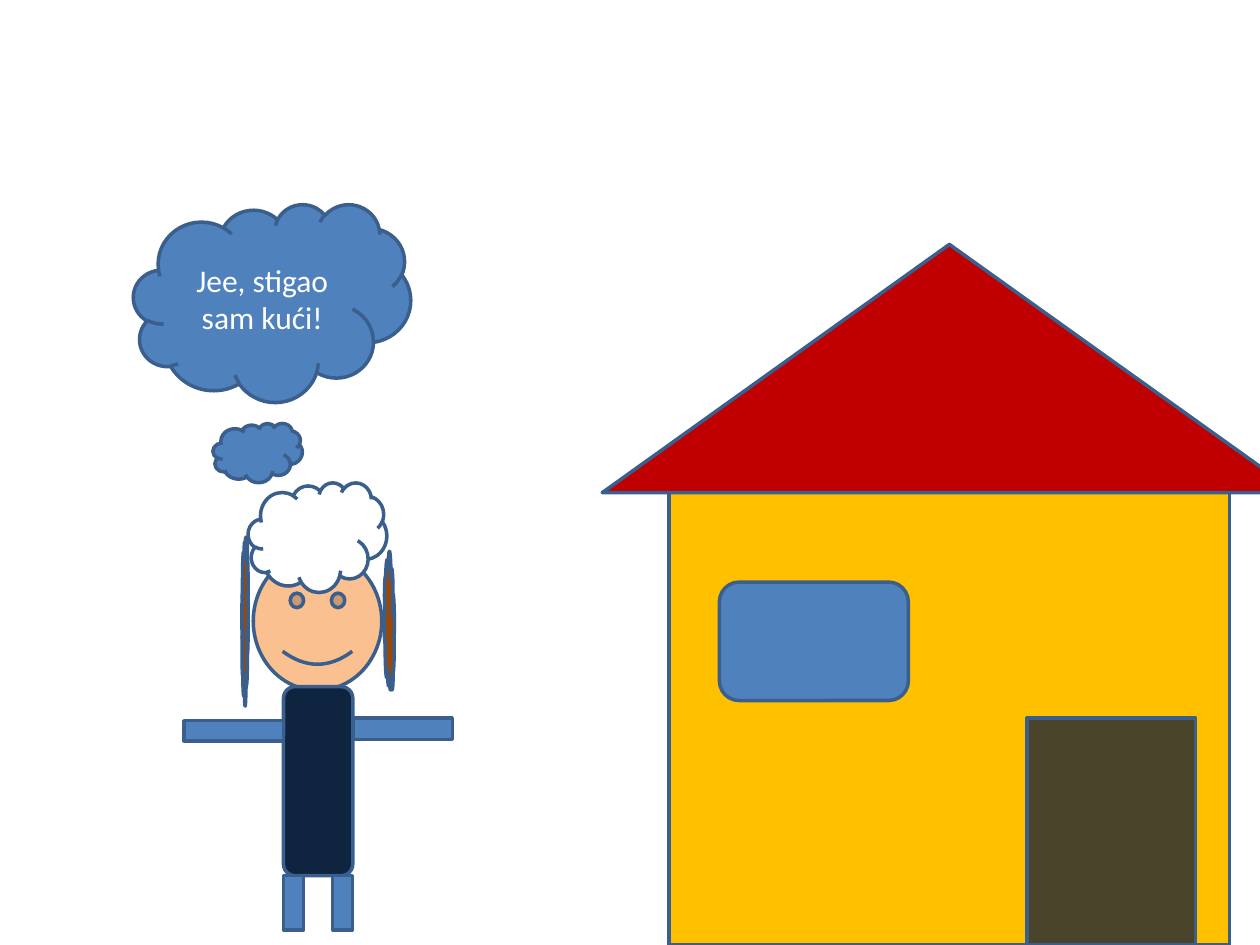
from dataclasses import dataclass

from pptx import Presentation, util as u
from pptx.dml import color
from pptx.enum import shapes, text

KIND = shapes.MSO_SHAPE


@dataclass(frozen=True)
class Theme:
    """Colours, type and line widths of the drawing."""
    outline: str = "3A5F8C"
    blue: str = "4F81BD"
    wall: str = "FFC000"
    roof: str = "C00000"
    door: str = "4A452A"
    skin: str = "FAC090"
    white: str = "FFFFFF"
    hair: str = "984807"
    body: str = "0F243E"
    font: str = "Calibri"
    size: int = 18
    line: int = 2


THEME = Theme()


@dataclass(frozen=True)
class Box:
    """A rectangle in inches."""
    left: float
    top: float
    width: float
    height: float

    def inner(self, left, top, width, height):
        """Return a box placed relative to this one."""
        return Box(self.left + left, self.top + top, width, height)


def add_figure(page, kind, box, fill, flip=False):
    """Draw one outlined preset shape."""
    lengths = (box.left, box.top, box.width, box.height)
    shape = page.shapes.add_shape(kind, *map(u.Inches, lengths))
    shape.shadow.inherit = False
    shape.fill.solid()
    shape.fill.fore_color.rgb = color.RGBColor.from_string(fill)
    shape.line.color.rgb = color.RGBColor.from_string(THEME.outline)
    shape.line.width = u.Pt(THEME.line)
    if flip:
        shape.element.spPr.xfrm.set("flipV", "1")
    return shape


def write(shape, words, size=THEME.size, ink=THEME.white, align=text.PP_ALIGN.CENTER):
    """Write formatted text in the middle of a shape."""
    frame = shape.text_frame
    frame.word_wrap = True
    frame.vertical_anchor = text.MSO_ANCHOR.MIDDLE
    para = frame.paragraphs[0]
    para.alignment = align
    span = para.add_run()
    span.text = words
    span.font.name = THEME.font
    span.font.size = u.Pt(size)
    span.font.color.rgb = color.RGBColor.from_string(ink)


def draw_house(page, box):
    """Draw the wall, roof, window and door."""
    roof_height, eave = 1.97, 0.53
    wall = box.inner(eave, roof_height, box.width - 2 * eave, box.height - roof_height)
    add_figure(page, KIND.RECTANGLE, wall, THEME.wall)
    add_figure(page, KIND.ISOSCELES_TRIANGLE, box.inner(0, 0, box.width, roof_height), THEME.roof)
    add_figure(page, KIND.ROUNDED_RECTANGLE, wall.inner(0.4, 0.71, 1.5, 0.94), THEME.blue)
    add_figure(page, KIND.RECTANGLE, wall.inner(2.84, wall.height - 1.8, 1.34, 1.8), THEME.door)


def draw_head(page, box):
    """Draw the face, the curls and a lock of hair on each side."""
    add_figure(page, KIND.SMILEY_FACE, box.inner(0.09, 0.55, 1.02, 1.1), THEME.skin)
    add_figure(page, KIND.CLOUD, box.inner(0.05, 0, 1.1, 0.87), THEME.white)
    add_figure(page, KIND.CLOUD, box.inner(1.13, 0.55, 0.08, 1.1), THEME.hair, flip=True)
    add_figure(page, KIND.CLOUD, box.inner(0, 0.43, 0.05, 1.34), THEME.hair)


def draw_body(page, box):
    """Draw the trunk with its legs and arms."""
    arm, leg, trunk_height = 0.79, 0.16, 1.5
    trunk = box.inner(arm, 0, box.width - 2 * arm, trunk_height)
    add_figure(page, KIND.ROUNDED_RECTANGLE, trunk, THEME.body)
    for left in (0, trunk.width - leg):
        limb = trunk.inner(left, trunk_height, leg, box.height - trunk_height)
        add_figure(page, KIND.RECTANGLE, limb, THEME.blue)
    for left, top, thickness in ((0, 0.27, 0.16), (box.width - arm, 0.25, 0.17)):
        add_figure(page, KIND.RECTANGLE, box.inner(left, top, arm, thickness), THEME.blue)


def draw_thought(page, box, words):
    """Draw the small puff and the cloud that holds the thought."""
    add_figure(page, KIND.CLOUD, box.inner(0.63, 1.74, 0.71, 0.47), THEME.blue)
    cloud = add_figure(page, KIND.CLOUD, box.inner(0, 0, box.width, 1.57), THEME.blue)
    write(cloud, words)


def main():
    """Build the slide and save the deck."""
    deck = Presentation()
    deck.slide_width, deck.slide_height = u.Inches(10), u.Inches(7.5)
    page = deck.slides.add_slide(deck.slide_layouts[6])
    draw_house(page, Box(4.78, 1.94, 5.51, 5.56))
    draw_head(page, Box(1.92, 3.83, 1.21, 1.77))
    draw_body(page, Box(1.46, 5.45, 2.13, 1.93))
    draw_thought(page, Box(1.06, 1.62, 2.2, 2.21), "Jee, stigao sam kući!")
    deck.save("out.pptx")


if __name__ == "__main__":
    main()
